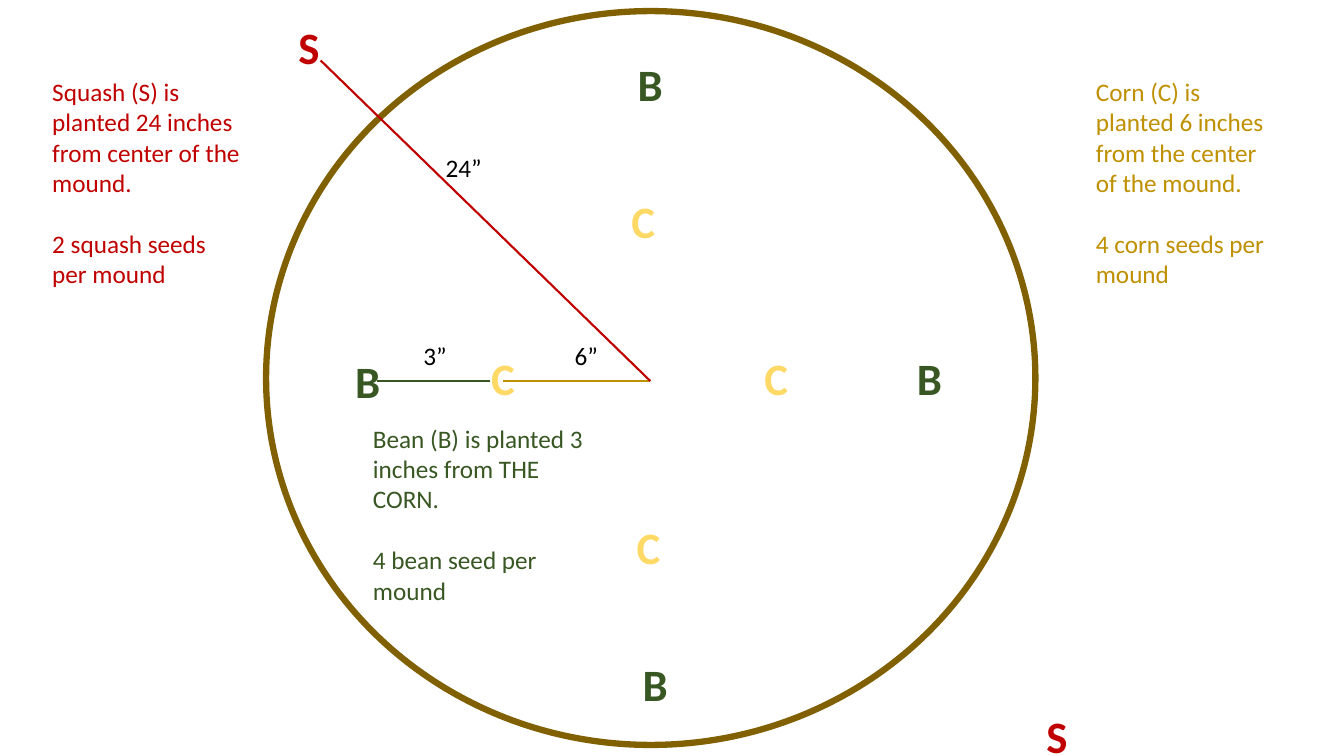
from dataclasses import dataclass

from lxml import etree
from pptx import Presentation
from pptx.dml.color import RGBColor
from pptx.enum.shapes import MSO_CONNECTOR, MSO_SHAPE
from pptx.enum.text import MSO_AUTO_SIZE, PP_ALIGN
from pptx.oxml.ns import qn
from pptx.slide import Slide
from pptx.util import Inches, Pt

OVAL = MSO_SHAPE.OVAL
STRAIGHT = MSO_CONNECTOR.STRAIGHT
CENTER = PP_ALIGN.CENTER
LEFT = PP_ALIGN.LEFT
GROW = MSO_AUTO_SIZE.SHAPE_TO_FIT_TEXT

WIDTH, HEIGHT = Inches(13.33), Inches(7.5)
FONT = "Calibri"
BLANK_LAYOUT = 6
COLORS = {
    "mound": "806000",
    "corn": "BF9000",
    "corn seed": "FFD966",
    "bean": "385723",
    "squash": "C00000",
    "label": "000000",
}


@dataclass(frozen=True)
class Area:
    """Percentages of the slide's width and height."""
    left: float
    top: float
    width: float
    height: float


@dataclass(frozen=True)
class Mark:
    text: str
    color: str
    size: int
    bold: bool
    width: float
    height: float
    centers: tuple[tuple[float, float], ...]


@dataclass(frozen=True)
class Spoke:
    color: str
    start: tuple[float, float]
    end: tuple[float, float]


@dataclass(frozen=True)
class Note:
    color: str
    area: Area
    paragraphs: tuple[str, str]


MOUND = Area(19.8, 1.47, 57.24, 97.07)
MOUND_CENTER = (48.39, 50.4)
SEED = (32, True, 3.3, 8.53)
DISTANCE = (18, False, 4.2, 5.33)

MARKS = (
    Mark("C", "corn seed", *SEED,
         ((37.43, 50), (57.76, 50), (47.86, 29.2), (48.24, 72.4))),
    Mark("B", "bean", *SEED,
         ((48.35, 11.07), (69.13, 50), (48.72, 90.53), (27.34, 50.4))),
    Mark("S", "squash", *SEED, ((22.99, 6.27), (78.65, 97.33))),
    Mark("6”", "label", *DISTANCE, ((43.62, 47.07),)),
    Mark("3”", "label", *DISTANCE, ((32.37, 47.07),)),
    Mark("24”", "label", *DISTANCE, ((34.51, 22.13),)),
)

SPOKES = (
    Spoke("corn", MOUND_CENTER, (37.43, 50.4)),
    Spoke("bean", (28.06, 50.4), (36.46, 50.4)),
    Spoke("squash", MOUND_CENTER, (23.86, 8)),
)

NOTES = (
    Note("squash", Area(3.15, 9.47, 15.53, 29.6),
         ("Squash (S) is planted 24 inches from center of the mound.",
          "2 squash seeds per mound")),
    Note("corn", Area(80.8, 9.47, 14.48, 29.6),
         ("Corn (C) is planted 6 inches from the center of the mound.",
          "4 corn seeds per mound")),
    Note("bean", Area(27.01, 55.33, 17.63, 25.6),
         ("Bean (B) is planted 3 inches from THE CORN.",
          "4 bean seed per mound")),
)


def across(percent: float) -> int:
    return round(WIDTH * percent / 100)


def down(percent: float) -> int:
    return round(HEIGHT * percent / 100)


def place(area: Area) -> tuple[int, int, int, int]:
    return across(area.left), down(area.top), across(area.width), down(area.height)


def color_of(name: str) -> RGBColor:
    return RGBColor.from_string(COLORS[name])


def add_text(page: Slide, area: Area, paragraphs: tuple[str, ...], color: str,
             size: int, bold: bool, wrap: bool, align: PP_ALIGN) -> None:
    frame = page.shapes.add_textbox(*place(area)).text_frame
    frame.word_wrap = wrap
    frame.auto_size = GROW
    frame.text = "\n".join(paragraphs)
    for index, para in enumerate(frame.paragraphs):
        para.alignment = align
        if index:
            para.space_before = Pt(22)
        para.font.name = FONT
        para.font.size = Pt(size)
        para.font.bold = bold
        para.font.color.rgb = color_of(color)


def add_mound(page: Slide) -> None:
    mound = page.shapes.add_shape(OVAL, *place(MOUND))
    mound.shadow.inherit = False
    mound.fill.background()
    mound.line.color.rgb = color_of("mound")
    mound.line.width = Pt(4.5)


def add_mark(page: Slide, mark: Mark) -> None:
    for x, y in mark.centers:
        area = Area(x - mark.width / 2, y - mark.height / 2, mark.width, mark.height)
        add_text(page, area, (mark.text,), mark.color, mark.size, mark.bold,
                 False, CENTER)


def add_spoke(page: Slide, spoke: Spoke) -> None:
    (x1, y1), (x2, y2) = spoke.start, spoke.end
    line = page.shapes.add_connector(STRAIGHT, across(x1), down(y1),
                                     across(x2), down(y2))
    line.line.color.rgb = color_of(spoke.color)
    line.line.width = Pt(1.5)
    etree.SubElement(line._element.spPr, qn("a:effectLst"))


def main() -> None:
    deck = Presentation()
    deck.slide_width, deck.slide_height = WIDTH, HEIGHT
    page = deck.slides.add_slide(deck.slide_layouts[BLANK_LAYOUT])
    add_mound(page)
    for mark in MARKS:
        add_mark(page, mark)
    for spoke in SPOKES:
        add_spoke(page, spoke)
    for note in NOTES:
        add_text(page, note.area, note.paragraphs, note.color, 18, False, True, LEFT)
    deck.save("out.pptx")


if __name__ == "__main__":
    main()
